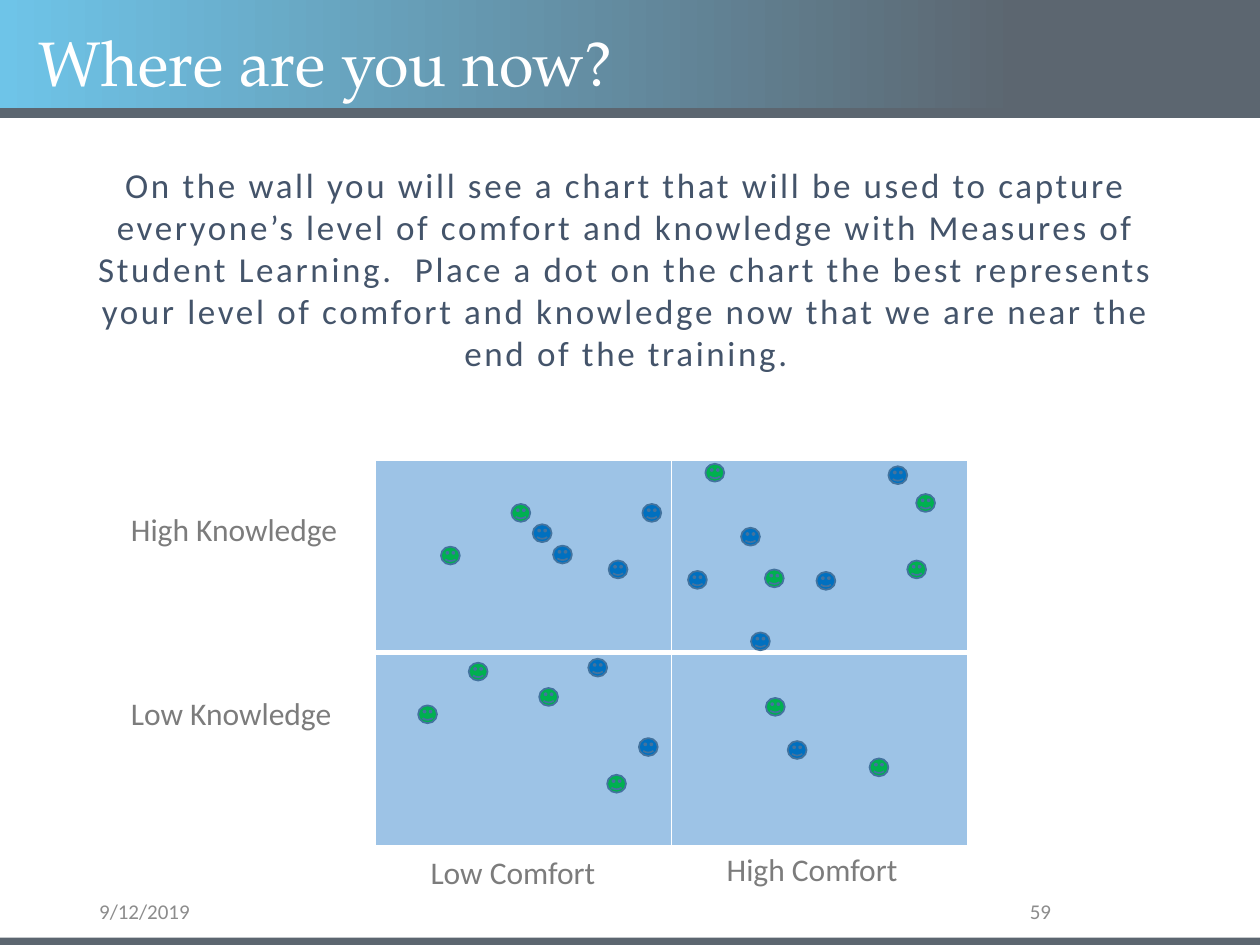
from lxml import etree
from pptx import Presentation, util as u
from pptx.dml.color import RGBColor
from pptx.enum import shapes, text
from pptx.oxml.ns import qn

COLORS = {
    "sky": "6EC4E8", "slate": "5C6670", "white": "FFFFFF", "cell": "9DC3E6",
    "label": "7C7C7C", "footer": "8C8C8C", "body": "44546A",
    "green": "00B050", "blue": "0070C0", "outline": "43739E",
}
SANS, SERIF = "Calibri", "TeX Gyre Pagella"
LEFT, CENTER, RIGHT = text.PP_ALIGN.LEFT, text.PP_ALIGN.CENTER, text.PP_ALIGN.RIGHT
TOP, MIDDLE = text.MSO_ANCHOR.TOP, text.MSO_ANCHOR.MIDDLE

SLIDE_W, SLIDE_H = 25.4, 19.05
HEADER_H, STRIPE_H = 2.2, 0.2
GRID = {"left": 7.57, "top": 9.27, "col": 5.97, "row": 3.89}
FACE_W, FACE_H = 0.38, 0.36

TITLE = "Where are you now?"
INSTRUCTIONS = (
    "On the wall you will see a chart that will be used to capture everyone’s "
    "level of comfort and knowledge with Measures of Student Learning.  Place a dot "
    "on the chart the best represents your level of comfort and knowledge now that "
    "we are near the end of the training."
)
LABELS = [
    ("High Knowledge", 2.39, 10.16),
    ("Low Knowledge", 2.39, 13.87),
    ("High Comfort", 14.4, 17.02),
    ("Low Comfort", 8.43, 17.07),
]
FOOTERS = [("9/12/2019", 1.75, 5.72, LEFT), ("59", 17.93, 3.51, RIGHT)]
FACES = {
    "green": [
        (8.43, 14.22), (18.29, 11.3), (8.89, 11.02), (15.44, 14.07),
        (9.45, 13.36), (10.31, 10.16), (12.24, 15.62), (15.42, 11.48),
        (18.47, 9.96), (14.22, 9.35), (17.53, 15.29), (10.87, 13.87),
    ],
    "blue": [
        (10.74, 10.57), (12.88, 14.88), (11.86, 13.28), (13.87, 11.51),
        (12.95, 10.16), (14.94, 10.64), (12.27, 11.3), (15.14, 12.75),
        (16.46, 11.53), (15.88, 14.94), (11.15, 11), (17.91, 9.4),
    ],
}


def rgb(name):
    return RGBColor.from_string(COLORS[name])


def box(*lengths):
    return [u.Cm(n) for n in lengths]


def add_shape(s, kind, place, fill, line=None):
    sp = s.shapes.add_shape(kind, *box(*place))
    sp.shadow.inherit = False
    sp.fill.solid()
    sp.fill.fore_color.rgb = rgb(fill)
    if line:
        sp.line.color.rgb = rgb(line)
        sp.line.width = u.Pt(1)
    else:
        sp.line.fill.background()
    return sp


def add_text(s, words, place, size, color, font=SANS, align=LEFT, anchor=TOP,
             line_spacing=None, tracking=None):
    tf = s.shapes.add_textbox(*box(*place)).text_frame
    tf.word_wrap = True
    tf.vertical_anchor = anchor
    p = tf.paragraphs[0]
    p.alignment = align
    if line_spacing:
        p.line_spacing = line_spacing
    r = p.add_run()
    r.text = words
    r.font.name = font
    r.font.size = u.Pt(size)
    r.font.color.rgb = rgb(color)
    if tracking:
        r._r.get_or_add_rPr().set("spc", str(round(tracking * 100)))


def set_borders(cell, **widths):
    tcPr = cell._tc.get_or_add_tcPr()
    for i, side in enumerate(("L", "R", "T", "B")):
        ln = etree.Element(qn(f"a:ln{side}"), w=str(u.Pt(widths.get(side, 1))))
        fill = etree.SubElement(ln, qn("a:solidFill"))
        etree.SubElement(fill, qn("a:srgbClr"), val=COLORS["white"])
        tcPr.insert(i, ln)


def add_header(s):
    rect = shapes.MSO_SHAPE.RECTANGLE
    banner = add_shape(s, rect, (0, 0, SLIDE_W, HEADER_H), "sky")
    banner.fill.gradient()
    banner.fill.gradient_angle = 0
    stops = (("sky", 0), ("slate", 0.81))
    for stop, (color, position) in zip(banner.fill.gradient_stops, stops):
        stop.color.rgb = rgb(color)
        stop.position = position
    for top in (HEADER_H - 0.02, 18.9):
        add_shape(s, rect, (0, top, SLIDE_W, STRIPE_H), "slate")
    add_text(s, TITLE, (0.53, 0.53, 21.89, 1.45), 36, "white", SERIF, line_spacing=0.9)


def add_grid(s):
    place = (GRID["left"], GRID["top"], 2 * GRID["col"], 2 * GRID["row"])
    table = s.shapes.add_table(2, 2, *box(*place)).table
    for col in table.columns:
        col.width = u.Cm(GRID["col"])
    for i, row in enumerate(table.rows):
        row.height = u.Cm(GRID["row"])
        for cell in row.cells:
            cell.fill.solid()
            cell.fill.fore_color.rgb = rgb("cell")
            set_borders(cell, **{"T" if i else "B": 3})


def main():
    prs = Presentation()
    prs.slide_width, prs.slide_height = box(SLIDE_W, SLIDE_H)
    s = prs.slides.add_slide(prs.slide_layouts[6])
    add_header(s)
    for words, left, width, align in FOOTERS:
        add_text(s, words, (left, 18.08, width, 0.58), 12, "footer",
                 align=align, anchor=MIDDLE)
    add_grid(s)
    for words, left, top in LABELS:
        add_text(s, words, (left, top, 4.93, 1.02), 18, "label")
    add_text(s, INSTRUCTIONS, (1.24, 3.18, 22.76, 4.52), 20, "body",
             align=CENTER, tracking=1.5)
    for color, places in FACES.items():
        for left, top in places:
            add_shape(s, shapes.MSO_SHAPE.SMILEY_FACE,
                      (left, top, FACE_W, FACE_H), color, "outline")
    prs.save("out.pptx")


if __name__ == "__main__":
    main()
